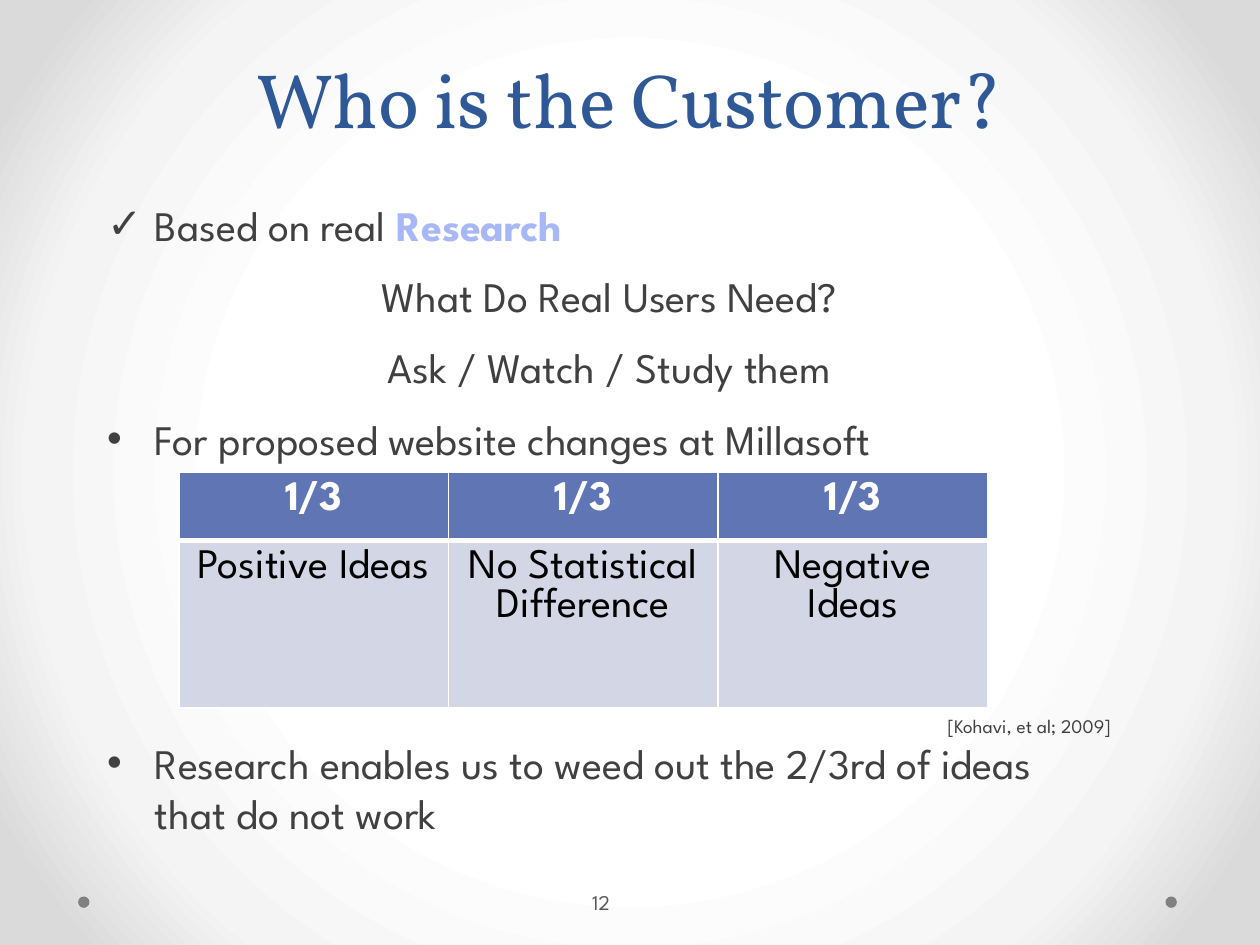
from lxml.etree import SubElement
from pptx import Presentation
from pptx.dml.color import RGBColor
from pptx.enum.shapes import MSO_SHAPE as Shape
from pptx.enum.text import MSO_ANCHOR as Anchor, MSO_AUTO_SIZE as AutoSize, PP_ALIGN as Align
from pptx.oxml import parse_xml
from pptx.oxml.ns import nsdecls, qn
from pptx.util import Inches, Pt

HEADING_FONT, BODY_FONT = "Vollkorn", "League Spartan"
WHITE = RGBColor(0xFF, 0xFF, 0xFF)
BLACK = RGBColor(0, 0, 0)
NAVY = RGBColor(0x2F, 0x58, 0x97)
INK = RGBColor(0x40, 0x40, 0x40)
MUTED = RGBColor(0x59, 0x59, 0x59)
DOT = RGBColor(0x80, 0x80, 0x80)
LILAC = RGBColor(0xA8, 0xB8, 0xF6)
HEADER_FILL = RGBColor(0x60, 0x76, 0xB4)
CELL_FILL = RGBColor(0xD2, 0xD6, 0xE5)
BACKDROP = [(50, WHITE), (76, RGBColor(0xF4, 0xF4, 0xF4)), (92, RGBColor(0xDA, 0xDA, 0xDA))]

SLIDE_WIDTH, SLIDE_HEIGHT = 10, 7.5
HANGING = Inches(0.38)


def place(shape, box):
    shape.left, shape.top, shape.width, shape.height = map(Inches, box)


def write(para, text, font=BODY_FONT, size=24, color=INK, bold=False, align=None):
    """Add a formatted span of text to a paragraph."""
    span = para.add_run()
    span.text = text
    span.font.name, span.font.size, span.font.bold = font, Pt(size), bold
    span.font.color.rgb = color
    if align is not None:
        para.alignment = align


def set_bullet(para, mark=None):
    """Give a paragraph a hanging bullet, or clear the inherited one."""
    props = para._p.get_or_add_pPr()
    props.set("marL", str(HANGING if mark else 0))
    props.set("indent", str(-HANGING if mark else 0))
    if mark:
        SubElement(props, qn("a:buChar")).set("char", mark)
    else:
        SubElement(props, qn("a:buNone"))


def paint_background(page):
    stops = "".join(
        f'<a:gs pos="{share * 1000}"><a:srgbClr val="{color}"/></a:gs>' for share, color in BACKDROP)
    page.element.cSld.insert(0, parse_xml(
        f'<p:bg {nsdecls("p", "a")}><p:bgPr><a:gradFill rotWithShape="1"><a:gsLst>{stops}</a:gsLst>'
        '<a:path path="circle"><a:fillToRect l="50000" t="50000" r="50000" b="50000"/></a:path>'
        '</a:gradFill><a:effectLst/></p:bgPr></p:bg>'))


def add_title(page, box, text):
    title = page.shapes.title
    place(title, box)
    frame = title.text_frame
    frame.auto_size, frame.vertical_anchor = AutoSize.NONE, Anchor.BOTTOM
    para = frame.paragraphs[0]
    para.line_spacing = Pt(58)
    write(para, text, font=HEADING_FONT, size=44, color=NAVY, align=Align.CENTER)


def add_body(page, box):
    body = page.placeholders[1]
    place(body, box)
    frame = body.text_frame
    frame.auto_size, frame.vertical_anchor = AutoSize.NONE, Anchor.TOP
    # Bullet, space before, alignment, then spans of text with their format
    lines = [
        ("✓", 0, Align.LEFT, [("Based on real ", {}), ("Research", {"color": LILAC, "bold": True})]),
        (None, 12, Align.CENTER, [("What Do Real Users Need?", {})]),
        (None, 12, Align.CENTER, [("Ask / Watch / Study them", {})]),
        ("•", 12, Align.LEFT, [("For proposed website changes at Millasoft", {})]),
        (None, 143, Align.RIGHT, [("[Kohavi, et al; 2009]", {"size": 11})]),
        ("•", 0, Align.LEFT,
         [("Research enables us to weed out the 2/3rd of ideas that do not work", {})]),
    ]
    for index, (mark, gap, align, spans) in enumerate(lines):
        para = frame.add_paragraph() if index else frame.paragraphs[0]
        para.line_spacing, para.space_before, para.space_after = 1.0, Pt(gap), Pt(0)
        set_bullet(para, mark)
        for text, style in spans:
            write(para, text, align=align, **style)


def set_borders(cell, **widths):
    props = cell._tc.get_or_add_tcPr()
    for index, (side, width) in enumerate(widths.items()):
        props.insert(index, parse_xml(
            f'<a:ln{side} {nsdecls("a")} w="{Pt(width)}"><a:solidFill>'
            f'<a:srgbClr val="{WHITE}"/></a:solidFill></a:ln{side}>'))


def add_results(page, box, row_heights):
    rows = [["1/3"] * 3, ["Positive Ideas", "No Statistical Difference", "Negative Ideas"]]
    table = page.shapes.add_table(len(rows), 3, *map(Inches, box)).table
    for row, height in zip(table.rows, row_heights):
        row.height = Inches(height)
    for row_index, texts in enumerate(rows):
        header = row_index == 0
        for column, text in enumerate(texts):
            cell = table.cell(row_index, column)
            cell.margin_left = cell.margin_right = Inches(0.1)
            cell.margin_top = cell.margin_bottom = Inches(0.07)
            cell.fill.solid()
            cell.fill.fore_color.rgb = HEADER_FILL if header else CELL_FILL
            set_borders(cell, L=1, R=1, T=1 if header else 3, B=3 if header else 1)
            write(cell.text_frame.paragraphs[0], text, color=WHITE if header else BLACK,
                  bold=header, align=Align.CENTER)


def add_footer(page, box, number):
    """Two dots at the ends of the box and the page number between them."""
    left, top, width, height = box
    size = 0.09
    for dot_left in (left, left + width - size):
        dot = page.shapes.add_shape(
            Shape.OVAL, *map(Inches, (dot_left, top + (height - size) / 2, size, size)))
        dot.shadow.inherit = False
        dot.fill.solid()
        dot.fill.fore_color.rgb = DOT
        dot.line.fill.background()
    label = page.shapes.add_textbox(*map(Inches, (left + 4.05, top, 0.61, height)))
    frame = label.text_frame
    frame.word_wrap, frame.vertical_anchor = True, Anchor.MIDDLE
    frame.margin_left, frame.margin_right = Inches(0.03), Inches(0.05)
    write(frame.paragraphs[0], number, size=12, color=MUTED)


def main():
    deck = Presentation()
    deck.slide_width, deck.slide_height = Inches(SLIDE_WIDTH), Inches(SLIDE_HEIGHT)
    page = deck.slides.add_slide(deck.slide_layouts[1])
    paint_background(page)
    add_footer(page, (0.62, 6.96, 8.72, 0.4), "12")
    add_title(page, (0.5, 0, 9, 1.19), "Who is the Customer?")
    add_body(page, (0.75, 1.53, 8.17, 5.23))
    add_results(page, (1.42, 3.75, 6.42, 1.86), (0.53, 1.33))
    deck.save("out.pptx")


if __name__ == "__main__":
    main()
